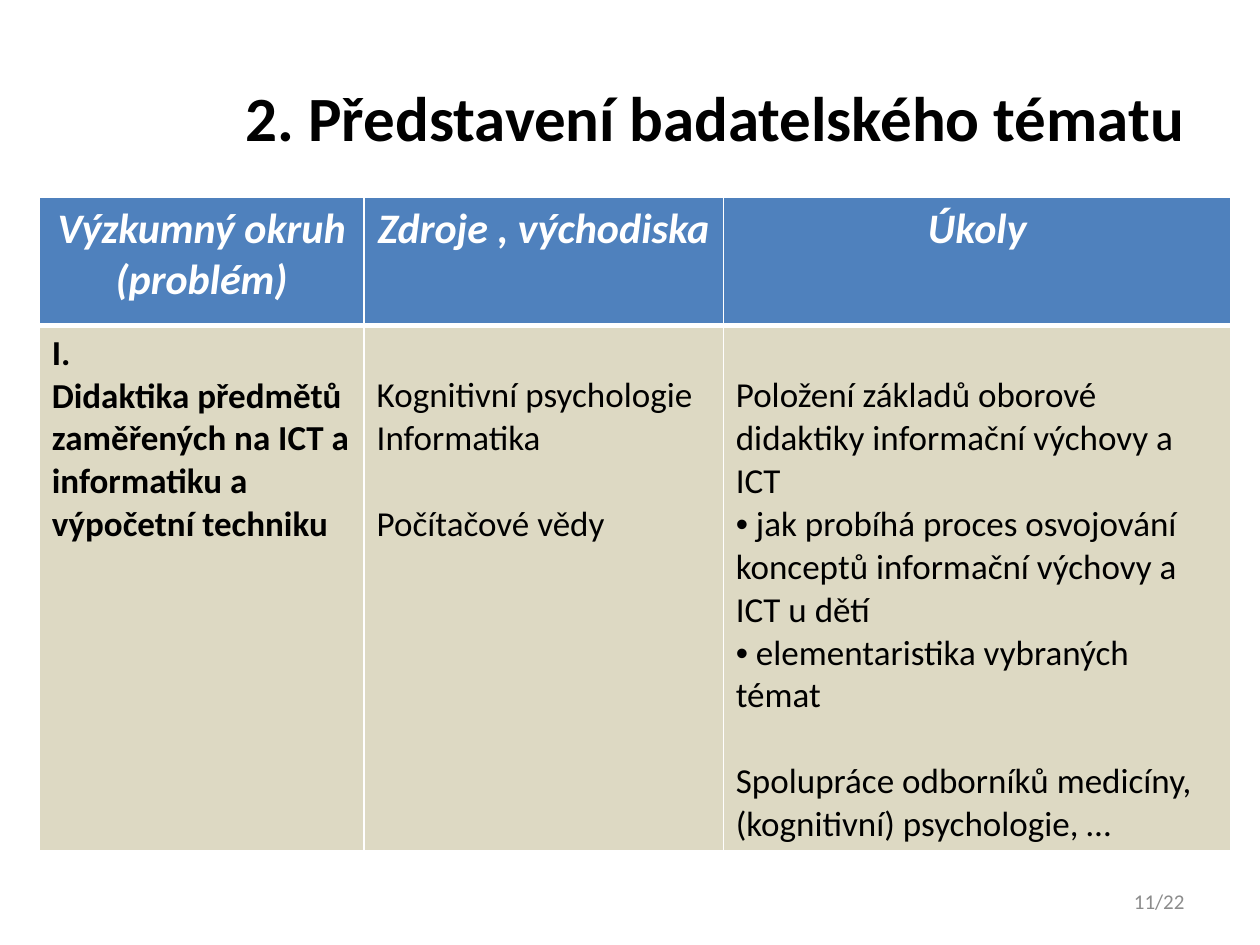
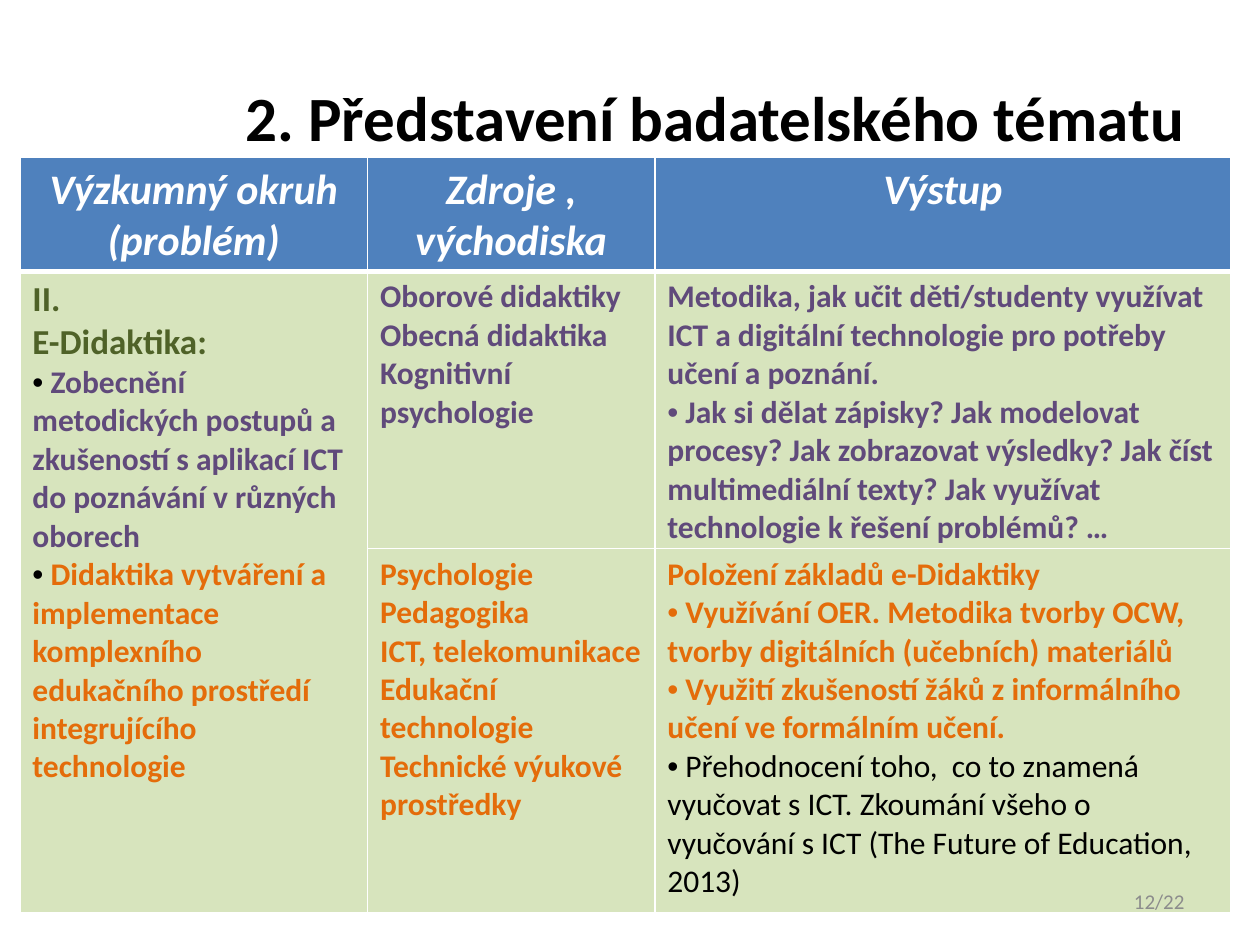
"""Builds two slides that present the research topic as tables."""
from dataclasses import dataclass

from lxml import etree
from pptx import Presentation
from pptx.dml.color import RGBColor
from pptx.enum.text import MSO_ANCHOR, PP_ALIGN
from pptx.oxml.ns import qn
from pptx.util import Cm, Pt

MIDDLE = MSO_ANCHOR.MIDDLE
LEFT, CENTER, RIGHT = PP_ALIGN.LEFT, PP_ALIGN.CENTER, PP_ALIGN.RIGHT
BLANK_LAYOUT = 6


@dataclass(frozen=True)
class Theme:
    """Colours, type sizes and line widths shared by the slides."""
    font: str = "Calibri"
    black: str = "000000"
    white: str = "FFFFFF"
    grey: str = "8C8C8C"
    blue: str = "4F81BD"
    sand: str = "DDD9C3"
    lime: str = "D7E4BD"
    olive: str = "4F6228"
    purple: str = "604A7B"
    orange: str = "E46C0A"
    title_size: int = 36
    head_size: int = 24
    large_size: int = 20
    body_size: int = 18
    footer_size: int = 12
    thin_line: int = 1
    thick_line: int = 3
    line_gap: float = 24.4
    gap_margin: float = 0.99


THEME = Theme()
TITLE = "2. Představení badatelského tématu"
PAGE_TOTAL = 22


@dataclass(frozen=True)
class Span:
    """One run of text with its look."""
    text: str
    size: int = THEME.body_size
    color: str = THEME.black
    bold: bool = False
    italic: bool = False


@dataclass(frozen=True)
class Para:
    """One paragraph made of spans."""
    spans: tuple
    align: int = LEFT
    bullet: bool = False
    space_before: float = 0


@dataclass(frozen=True)
class CellText:
    """The paragraphs of a table cell, with a top margin when they start lower."""
    paras: list
    margin_top: float = 0.13


def line(text, size=THEME.body_size, color=THEME.black, bold=False, **layout):
    """Return a paragraph that holds a single span."""
    return Para((Span(text, size, color, bold),), **layout)


def bold_lines(color, *texts):
    """Return bold body paragraphs in one colour."""
    return [line(text, color=color, bold=True) for text in texts]


def bold_bullet(text, color):
    """Return a bold bulleted paragraph whose bullet has the text colour."""
    return line(" " + text, color=color, bold=True, bullet=True)


def dark_bullet(text, color):
    """Return a bold bulleted paragraph whose bullet stays black."""
    return Para((Span(" "), Span(text, color=color, bold=True)), bullet=True)


def large(text, **layout):
    """Return a plain paragraph in the large body size."""
    return line(text, THEME.large_size, **layout)


def header(text):
    """Return the text of a header cell."""
    span = Span(text, THEME.head_size, THEME.white, True, True)
    return CellText([Para((span,), CENTER)])


def add_bullet(para):
    """Give a paragraph a round bullet without indent."""
    properties = para._p.get_or_add_pPr()
    properties.set("marL", "0")
    properties.set("indent", "0")
    etree.SubElement(properties, qn("a:buFont"), typeface="Arial")
    etree.SubElement(properties, qn("a:buChar"), char="•")


def write_paras(frame, paras):
    """Write paragraphs into a text frame run by run."""
    for index, content in enumerate(paras):
        para = frame.add_paragraph() if index else frame.paragraphs[0]
        para.alignment = content.align
        if content.space_before:
            para.space_before = Pt(content.space_before)
        if content.bullet:
            add_bullet(para)
        for span in content.spans:
            run = para.add_run()
            run.text = span.text
            run.font.name = THEME.font
            run.font.size = Pt(span.size)
            run.font.bold = span.bold
            run.font.italic = span.italic
            run.font.color.rgb = RGBColor.from_string(span.color)


def add_text(page, left, top, width, height, para):
    """Add a wrapped, vertically centred text box."""
    box = page.shapes.add_textbox(Cm(left), Cm(top), Cm(width), Cm(height))
    box.text_frame.word_wrap = True
    box.text_frame.vertical_anchor = MIDDLE
    write_paras(box.text_frame, [para])


def set_borders(cell, top, bottom):
    """Draw white borders on all sides of a cell."""
    properties = cell._tc.get_or_add_tcPr()
    sides = {"lnL": THEME.thin_line, "lnR": THEME.thin_line, "lnT": top, "lnB": bottom}
    for index, (side, width) in enumerate(sides.items()):
        border = etree.Element(qn(f"a:{side}"), w=str(Pt(width)))
        fill = etree.SubElement(border, qn("a:solidFill"))
        etree.SubElement(fill, qn("a:srgbClr"), val=THEME.white)
        properties.insert(index, border)


def style_cell(cell, row, body_fill):
    """Fill and border a cell by its row."""
    cell.fill.solid()
    cell.fill.fore_color.rgb = RGBColor.from_string(body_fill if row else THEME.blue)
    set_borders(cell,
                THEME.thick_line if row == 1 else THEME.thin_line,
                THEME.thin_line if row else THEME.thick_line)


def add_topic_table(page, left, top, widths, heights, body_fill, rows):
    """Add a table with a blue header; None marks a cell merged upward."""
    table = page.shapes.add_table(len(heights), len(widths), Cm(left), Cm(top),
                                  Cm(sum(widths)), Cm(sum(heights))).table
    table.horz_banding = False
    for column, width in zip(table.columns, widths):
        column.width = Cm(width)
    for table_row, height in zip(table.rows, heights):
        table_row.height = Cm(height)
    for row, contents in enumerate(rows):
        for column, content in enumerate(contents):
            cell = table.cell(row, column)
            style_cell(cell, row, body_fill)
            if content is None:
                table.cell(row - 1, column).merge(cell)
            else:
                cell.margin_top = Cm(content.margin_top)
                write_paras(cell.text_frame, content.paras)


def add_page(deck):
    """Add a blank slide with the shared title."""
    page = deck.slides.add_slide(deck.slide_layouts[BLANK_LAYOUT])
    add_text(page, 1.27, 0.76, 22.86, 3.18,
             line(TITLE, THEME.title_size, bold=True, align=RIGHT))
    return page


def add_footer(page, number):
    """Add the page number and the total."""
    add_text(page, 18.21, 17.65, 5.92, 1.02,
             line(f"{number}/{PAGE_TOTAL}", THEME.footer_size, THEME.grey, align=RIGHT))


def didactics_rows():
    """Return the cells of the ICT didactics table."""
    area = CellText([
        large("I.", bold=True),
        large("Didaktika předmětů zaměřených na ICT a informatiku a výpočetní techniku",
              bold=True),
    ])
    sources = CellText([
        large("Kognitivní psychologie"),
        large("Informatika"),
        large("Počítačové vědy", space_before=THEME.line_gap),
    ], THEME.gap_margin)
    tasks = CellText([
        large("Položení základů oborové didaktiky informační výchovy a ICT"),
        large(" jak probíhá proces osvojování konceptů informační výchovy a ICT u dětí",
              bullet=True),
        large(" elementaristika vybraných témat", bullet=True),
        large("Spolupráce odborníků medicíny, (kognitivní) psychologie, …",
              space_before=THEME.line_gap),
    ], THEME.gap_margin)
    return [
        [header("Výzkumný okruh (problém)"), header("Zdroje , východiska"), header("Úkoly")],
        [area, sources, tasks],
    ]


def e_didactics_rows():
    """Return the cells of the e-didactics table."""
    area = CellText([
        line("II.", THEME.large_size, THEME.olive, True),
        line("E-Didaktika:", THEME.large_size, THEME.olive, True),
        dark_bullet("Zobecnění metodických postupů a zkušeností s aplikací ICT "
                    "do poznávání v různých oborech", THEME.purple),
        dark_bullet("Didaktika vytváření a implementace komplexního edukačního "
                    "prostředí integrujícího technologie", THEME.orange),
    ])
    method_sources = CellText(bold_lines(
        THEME.purple, "Oborové didaktiky", "Obecná didaktika", "Kognitivní psychologie"))
    method_output = CellText([
        *bold_lines(THEME.purple, "Metodika, jak učit děti/studenty využívat ICT a digitální "
                                  "technologie pro potřeby učení a poznání."),
        bold_bullet("Jak si dělat zápisky? Jak modelovat procesy? Jak zobrazovat výsledky? "
                    "Jak číst multimediální texty? Jak využívat technologie "
                    "k řešení problémů? …", THEME.purple),
    ])
    setting_sources = CellText(bold_lines(
        THEME.orange, "Psychologie", "Pedagogika", "ICT, telekomunikace",
        "Edukační technologie", "Technické výukové prostředky"))
    setting_output = CellText([
        *bold_lines(THEME.orange, "Položení základů e-Didaktiky"),
        bold_bullet("Využívání OER. Metodika tvorby OCW, tvorby digitálních "
                    "(učebních) materiálů", THEME.orange),
        bold_bullet("Využití zkušeností žáků z informálního učení ve formálním učení.",
                    THEME.orange),
        line(" Přehodnocení toho,  co to znamená vyučovat s ICT. Zkoumání všeho o "
             "vyučování s ICT (The Future of Education, 2013)", bullet=True),
    ])
    return [
        [header("Výzkumný okruh (problém)"), header("Zdroje , východiska"), header("Výstup")],
        [area, method_sources, method_output],
        [None, setting_sources, setting_output],
    ]


def main():
    """Build both slides and save the deck."""
    deck = Presentation()
    deck.slide_width, deck.slide_height = Cm(25.4), Cm(19.05)

    page = add_page(deck)
    add_topic_table(page, 0.79, 3.97, (6.55, 7.24, 10.24), (2.59, 10.59),
                    THEME.sand, didactics_rows())
    add_footer(page, 11)

    page = add_page(deck)
    add_topic_table(page, 0.4, 3.18, (7.01, 5.79, 11.61), (2.13, 5.21, 7.34),
                    THEME.lime, e_didactics_rows())
    add_footer(page, 12)

    deck.save("out.pptx")


if __name__ == "__main__":
    main()
